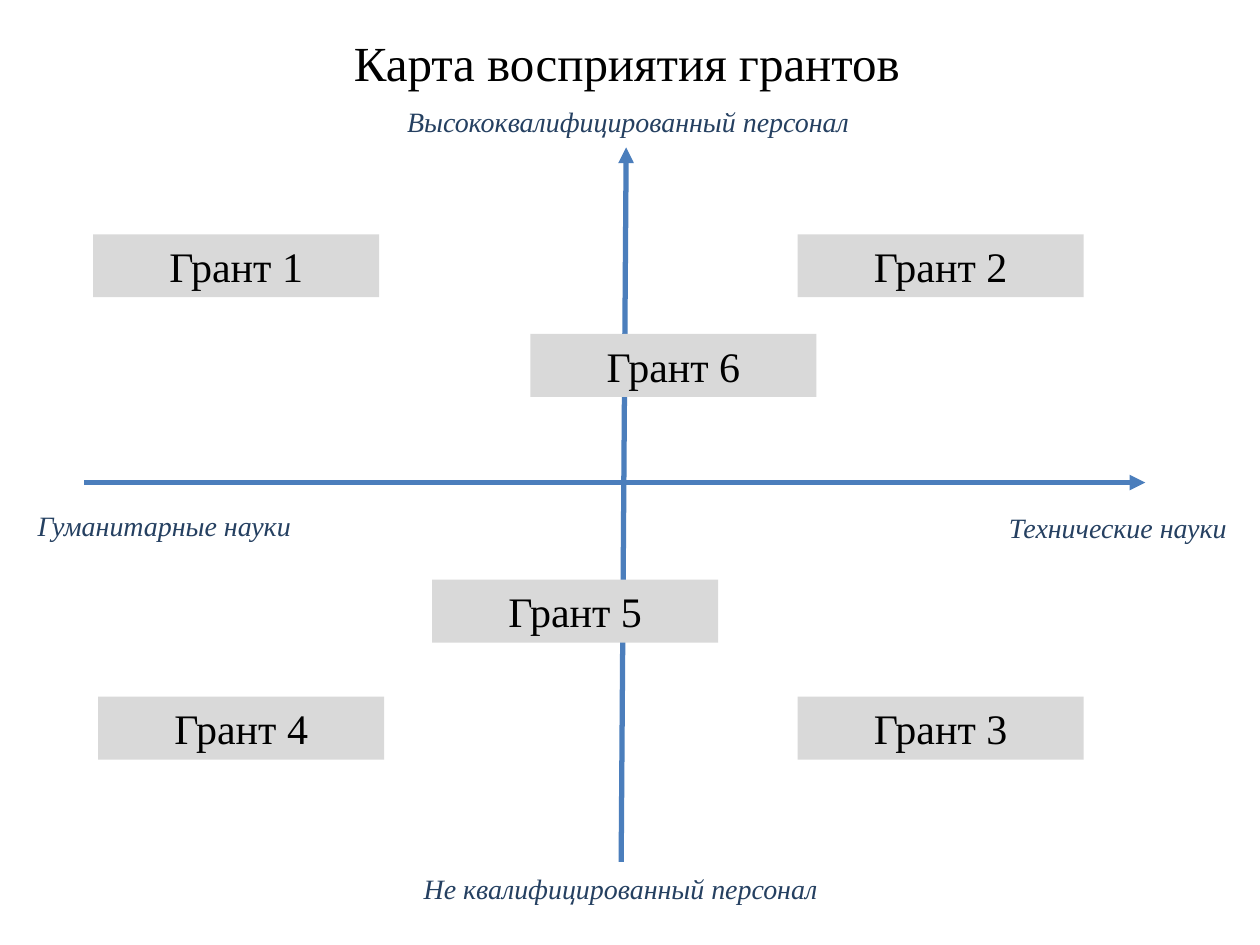
from dataclasses import dataclass

from pptx import Presentation
from pptx.dml.color import RGBColor
from pptx.enum.shapes import MSO_CONNECTOR as Connector, MSO_SHAPE as Shape
from pptx.enum.text import MSO_ANCHOR as Anchor, MSO_AUTO_SIZE as AutoSize, PP_ALIGN as Align
from pptx.oxml.ns import qn
from pptx.util import Inches, Pt
from lxml.etree import SubElement

COLUMNS, ROWS = 100, 75
TITLE_ONLY = 5


@dataclass(frozen=True)
class Theme:
    font: str = "Times New Roman"
    axis: RGBColor = RGBColor(0x4B, 0x7E, 0xBC)
    label: RGBColor = RGBColor(0x25, 0x40, 0x61)
    card: RGBColor = RGBColor(0xD9, 0xD9, 0xD9)
    text: RGBColor = RGBColor(0, 0, 0)
    title_size: int = 28
    card_size: int = 24
    label_size: int = 16
    axis_width: int = 3


class PerceptionMap:
    """Draws on one slide; lengths are columns and rows of the grid."""

    def __init__(self, presentation, theme):
        self.theme = theme
        self.slide = presentation.slides.add_slide(presentation.slide_layouts[TITLE_ONLY])
        self.column = presentation.slide_width / COLUMNS
        self.row = presentation.slide_height / ROWS

    def place(self, left, top, width, height):
        return [round(left * self.column), round(top * self.row),
                round(width * self.column), round(height * self.row)]

    def set_text(self, shape, text, size, color, italic=False, align=Align.CENTER,
                 wrap=True, anchor=Anchor.TOP, fit=AutoSize.SHAPE_TO_FIT_TEXT):
        frame = shape.text_frame
        frame_format = {"text": text, "word_wrap": wrap, "auto_size": fit,
                        "vertical_anchor": anchor}
        for name, value in frame_format.items():
            setattr(frame, name, value)
        paragraph = frame.paragraphs[0]
        paragraph.alignment = align
        font = paragraph.runs[0].font
        font_format = {"name": self.theme.font, "size": Pt(size), "italic": italic}
        for name, value in font_format.items():
            setattr(font, name, value)
        font.color.rgb = color

    def title(self, text, *box):
        shape = self.slide.shapes.title
        shape.left, shape.top, shape.width, shape.height = self.place(*box)
        self.set_text(shape, text, self.theme.title_size, self.theme.text, fit=AutoSize.NONE)

    def axis(self, start, end):
        begin_x, begin_y, end_x, end_y = self.place(*start, *end)
        connector = self.slide.shapes.add_connector(
            Connector.STRAIGHT, begin_x, begin_y, end_x, end_y)
        connector.line.color.rgb = self.theme.axis
        connector.line.width = Pt(self.theme.axis_width)
        properties = connector._element.spPr
        SubElement(properties.find(qn("a:ln")), qn("a:tailEnd"), type="triangle")
        SubElement(properties, qn("a:effectLst"))

    def label(self, text, *box, align=Align.CENTER, wrap=True):
        shape = self.slide.shapes.add_textbox(*self.place(*box))
        self.set_text(shape, text, self.theme.label_size, self.theme.label,
                      italic=True, align=align, wrap=wrap)

    def card(self, text, left, top, width=22.7, height=5):
        shape = self.slide.shapes.add_shape(
            Shape.RECTANGLE, *self.place(left, top, width, height))
        shape.shadow.inherit = False
        shape.fill.solid()
        shape.fill.fore_color.rgb = self.theme.card
        shape.line.fill.background()
        self.set_text(shape, text, self.theme.card_size, self.theme.text)


def main():
    presentation = Presentation()
    presentation.slide_width, presentation.slide_height = Inches(10), Inches(7.5)
    grant_map = PerceptionMap(presentation, Theme())

    grant_map.title("Карта восприятия грантов", 26.5, 2.1, 46.5, 5.7)
    grant_map.axis((49.3, 68.4), (49.7, 11.7))
    grant_map.axis((6.7, 38.3), (90.9, 38.3))

    side = {"align": Align.LEFT, "wrap": False}
    grant_map.label("Технические науки", 79.1, 40, 19.6, 3.7, **side)
    grant_map.label("Гуманитарные науки", 2, 39.9, 22.7, 3.7, **side)
    grant_map.label("Высококвалифицированный персонал", 29, 7.8, 41.7, 3.7)
    grant_map.label("Не квалифицированный персонал", 30.5, 68.7, 37.5, 3.7)

    right, upper, lower = 63.3, 18.6, 55.3
    grants = [(7.4, upper), (right, upper), (right, lower),
              (7.8, lower), (34.3, 46), (42.1, 26.5)]
    for number, position in enumerate(grants, start=1):
        grant_map.card(f"Грант {number}", *position)

    presentation.save("out.pptx")


if __name__ == "__main__":
    main()
